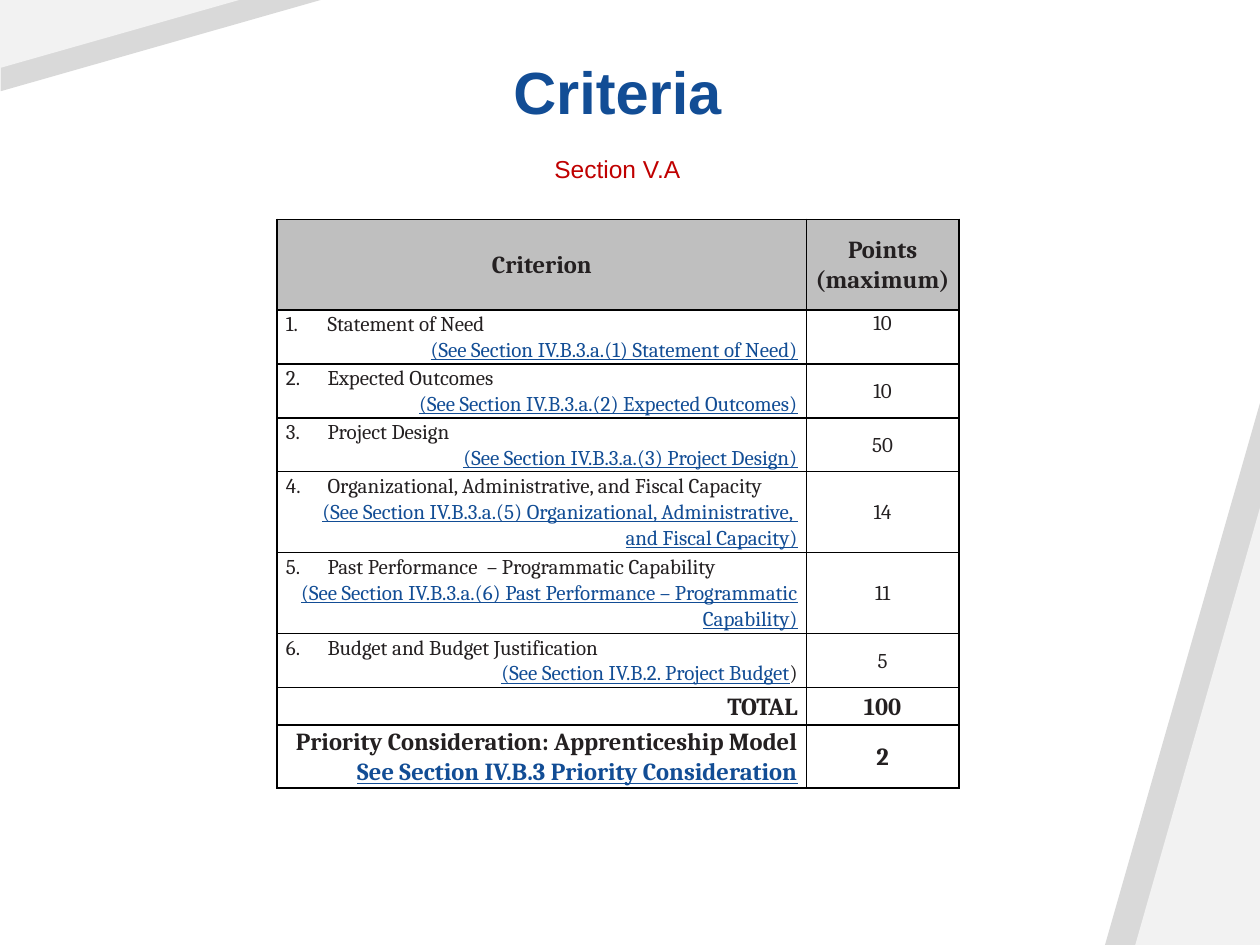
"""Build the grant criteria slide with its points table."""
from lxml import etree
from pptx import Presentation
from pptx import util as u
from pptx.dml import color
from pptx.enum import shapes, text
from pptx.oxml import ns

HUES = {"blue": "124D95", "red": "C00000", "ink": "242021", "head": "BFBFBF",
        "band": "D9D9D9", "pale": "F2F2F2", "line": "000000"}
LEFT, MID, RIGHT = text.PP_ALIGN.LEFT, text.PP_ALIGN.CENTER, text.PP_ALIGN.RIGHT
TOP, CENTRE = text.MSO_ANCHOR.TOP, text.MSO_ANCHOR.MIDDLE
ITEMS = [
    ("Statement of Need", ["(See Section IV.B.3.a.(1) Statement of Need)"], "10"),
    ("Expected Outcomes", ["(See Section IV.B.3.a.(2) Expected Outcomes)"], "10"),
    ("Project Design", ["(See Section IV.B.3.a.(3) Project Design)"], "50"),
    ("Organizational, Administrative, and Fiscal Capacity",
     ["(See Section IV.B.3.a.(5) Organizational, Administrative, ",
      "and Fiscal Capacity)"], "14"),
    ("Past Performance  – Programmatic Capability",
     ["(See Section IV.B.3.a.(6) Past Performance – Programmatic Capability)"], "11"),
    ("Budget and Budget Justification", ["(See Section IV.B.2. Project Budget"], "5"),
]
COLS = [4.2, 1.21]
ROWS = [0.72, 0.41, 0.41, 0.41, 0.62, 0.62, 0.41, 0.3, 0.48]


def rgb(hue):
    """Return the colour object for a named hue."""
    return color.RGBColor.from_string(HUES[hue])


def add_run(para, words, face="Cambria", size=12, hue="ink", bold=False, under=False):
    """Add a formatted run to a paragraph."""
    run = para.add_run()
    run.text = words
    font = run.font
    font.name, font.size, font.bold = face, u.Pt(size), bold
    font.underline = under
    font.color.rgb = rgb(hue)


def write(frame, words, align=MID, lead=1.07, **style):
    """Write one paragraph, using the empty first one when there is one."""
    para = frame.paragraphs[0]
    if para.runs:
        para = frame.add_paragraph()
    para.alignment, para.line_spacing = align, lead
    add_run(para, words, **style)
    return para


def number(para, start):
    """Make a paragraph a numbered item with a hanging indent."""
    props = para._p.get_or_add_pPr()
    hang = u.Inches(0.33)
    props.set("marL", str(hang))
    props.set("indent", str(-hang))
    mark = etree.SubElement(props, ns.qn("a:buAutoNum"))
    mark.set("type", "arabicPeriod")
    mark.set("startAt", str(start))


def add_wedge(slide, box, hue, turned=False):
    """Add a corner triangle, turned for the top left corner."""
    wedge = slide.shapes.add_shape(shapes.MSO_SHAPE.ISOSCELES_TRIANGLE,
                                   *map(u.Inches, box))
    wedge.adjustments[0] = 1
    wedge.shadow.inherit = False
    wedge.fill.solid()
    wedge.fill.fore_color.rgb = rgb(hue)
    wedge.line.fill.background()
    if turned:
        wedge.rotation = 270
        wedge._element.spPr.xfrm.set("flipV", "1")


def style_cell(cell, fill=None):
    """Set margins, anchor, fill and borders of a cell."""
    cell.margin_left = cell.margin_right = u.Inches(0.07)
    cell.margin_top = cell.margin_bottom = 0
    cell.vertical_anchor = CENTRE
    if fill:
        cell.fill.solid()
        cell.fill.fore_color.rgb = rgb(fill)
    else:
        cell.fill.background()
    props = cell._tc.get_or_add_tcPr()
    for spot, side in enumerate("LRTB"):
        edge = etree.Element(ns.qn(f"a:ln{side}"), w=str(u.Pt(1)))
        paint = etree.SubElement(edge, ns.qn("a:solidFill"))
        etree.SubElement(paint, ns.qn("a:srgbClr"), val=HUES["line"])
        props.insert(spot, edge)


def add_title(slide):
    """Place the title and the section line below it."""
    title = slide.shapes.title
    title.left, title.top = u.Inches(0.55), u.Inches(-0.09)
    title.width, title.height = u.Inches(8.7), u.Inches(1.15)
    title.text_frame.vertical_anchor = text.MSO_ANCHOR.BOTTOM
    write(title.text_frame, "Criteria", lead=0.9, face="Arial", size=34,
          hue="blue", bold=True)
    box = slide.shapes.add_textbox(*map(u.Inches, (1.12, 1.2, 7.56, 5.33)))
    box.text_frame.word_wrap = True
    write(box.text_frame, "Section V.A", lead=0.9, face="Arial", size=14, hue="red")


def add_grid(slide):
    """Add the empty criteria table and return it."""
    frame = slide.shapes.add_table(len(ROWS), len(COLS), u.Inches(2.2), u.Inches(1.74),
                                   u.Inches(sum(COLS)), u.Inches(sum(ROWS)))
    grid = frame.table
    grid.first_row = grid.horz_banding = False
    for col, width in zip(grid.columns, COLS):
        col.width = u.Inches(width)
    for index, (row, height) in enumerate(zip(grid.rows, ROWS)):
        row.height = u.Inches(height)
        for cell in row.cells:
            style_cell(cell, None if index else "head")
    return grid


def fill_grid(grid):
    """Write the heading, the numbered criteria and the totals."""
    strong = {"size": 14, "bold": True}
    link = {"align": RIGHT, "hue": "blue", "under": True}
    frames = [[cell.text_frame for cell in row.cells] for row in grid.rows]
    write(frames[0][0], "Criterion", **strong)
    for words in ("Points", "(maximum)"):
        write(frames[0][1], words, **strong)
    for index, (name, refs, points) in enumerate(ITEMS, 1):
        left, right = frames[index]
        number(write(left, name, align=LEFT), index)
        for ref in refs:
            last = write(left, ref, **link)
        write(right, points)
    add_run(last, ")")
    grid.cell(1, 1).vertical_anchor = TOP
    total, extra = frames[-2:]
    write(total[0], "TOTAL", align=RIGHT, **strong)
    write(total[1], "100", **strong)
    write(extra[0], "Priority Consideration: Apprenticeship Model", align=RIGHT, **strong)
    write(extra[0], "See Section IV.B.3 Priority Consideration", **link, **strong)
    write(extra[1], "2", **strong)


def main():
    """Build and save the slide."""
    deck = Presentation()
    deck.slide_width, deck.slide_height = u.Inches(10), u.Inches(7.5)
    slide = deck.slides.add_slide(deck.slide_layouts[5])
    add_wedge(slide, (8.77, 3.2, 1.23, 4.3), "band")
    add_wedge(slide, (9.01, 4.03, 0.99, 3.47), "pale")
    add_wedge(slide, (0.92, -0.92, 0.73, 2.56), "band", turned=True)
    add_wedge(slide, (0.68, -0.68, 0.54, 1.9), "pale", turned=True)
    add_title(slide)
    fill_grid(add_grid(slide))
    deck.save("out.pptx")


if __name__ == "__main__":
    main()
